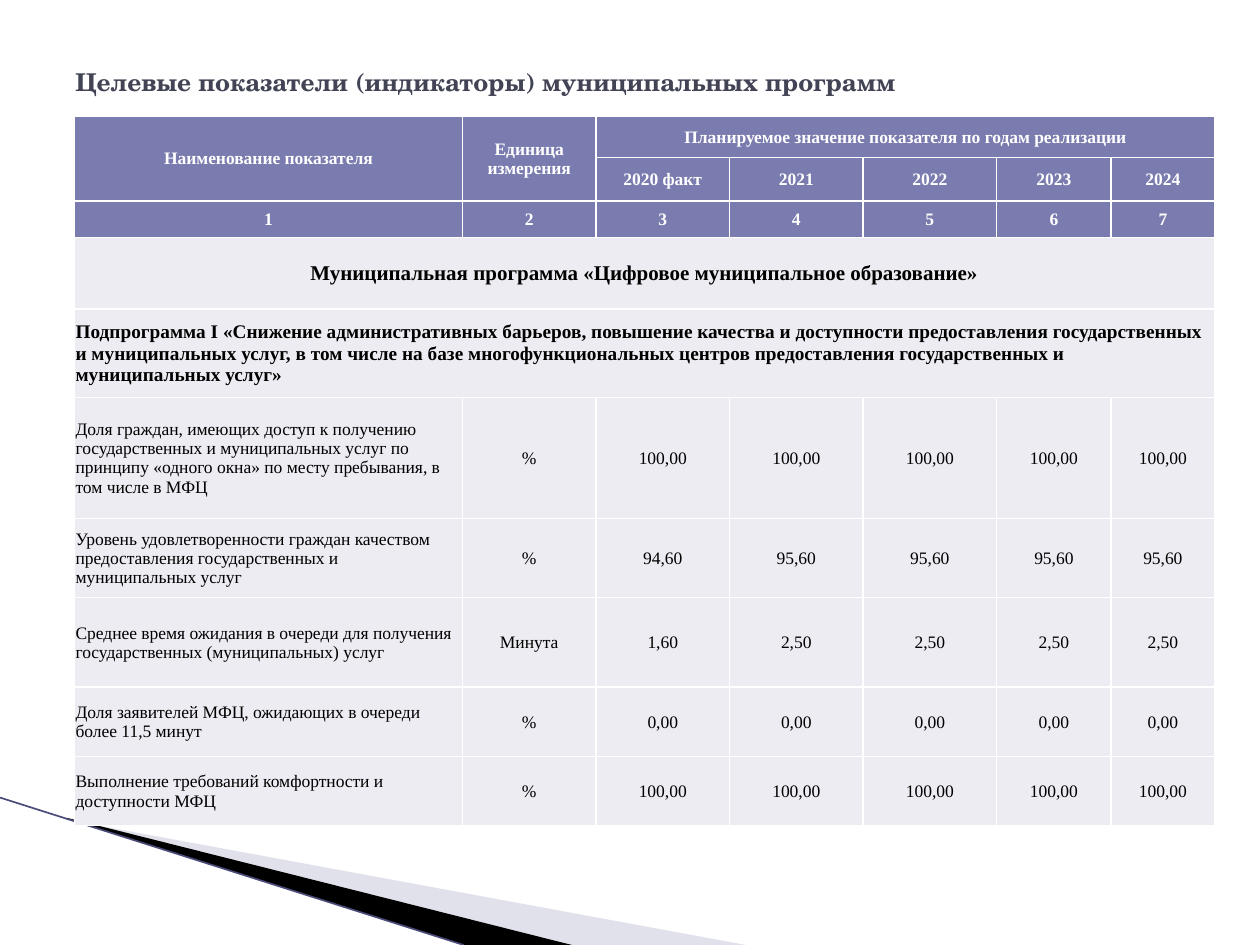
from lxml.etree import SubElement
from pptx import Presentation
from pptx.dml.color import RGBColor
from pptx.enum.shapes import MSO_CONNECTOR
from pptx.enum.text import MSO_ANCHOR, PP_ALIGN
from pptx.oxml.ns import qn
from pptx.util import Inches, Pt

HEADER_FILL = "7A7BAE"
BODY_FILL = "ECECF2"
COLUMN_WIDTHS = [3.08, 1.06, 1.06, 1.06, 1.06, 0.91, 0.82]
ROW_HEIGHTS = [0.33, 0.32, 0.29, 0.57, 0.7, 0.96, 0.63, 0.71, 0.55, 0.55]
YEARS = ["2020 факт", "2021", "2022", "2023", "2024"]
PROGRAM = "Муниципальная программа «Цифровое муниципальное образование»"
SUBPROGRAM = (
    "Подпрограмма I «Снижение административных барьеров, повышение качества "
    "и доступности предоставления государственных и муниципальных услуг, "
    "в том числе на базе многофункциональных центров предоставления "
    "государственных и муниципальных услуг»"
)
INDICATORS = [
    ("Доля граждан, имеющих доступ к получению государственных и муниципальных "
     "услуг по принципу «одного окна» по месту пребывания, в том числе в МФЦ",
     "%", "100,00", "100,00"),
    ("Уровень удовлетворенности граждан качеством предоставления "
     "государственных и муниципальных услуг", "%", "94,60", "95,60"),
    ("Среднее время ожидания в очереди для получения государственных "
     "(муниципальных) услуг", "Минута", "1,60", "2,50"),
    ("Доля заявителей МФЦ, ожидающих в очереди более 11,5 минут",
     "%", "0,00", "0,00"),
    ("Выполнение требований комфортности и доступности МФЦ",
     "%", "100,00", "100,00"),
]


def color(value):
    return RGBColor.from_string(value)


def write_text(text_frame, text, size=10, font="Times New Roman",
               fill="000000", bold=False, align=PP_ALIGN.CENTER):
    paragraph = text_frame.paragraphs[0]
    paragraph.alignment = align
    run = paragraph.add_run()
    run.text = text
    run.font.size = Pt(size)
    run.font.name = font
    run.font.bold = bold
    run.font.color.rgb = color(fill)


def add_title(slide, text):
    box = slide.shapes.add_textbox(Inches(0.5), Inches(0.3), Inches(9), Inches(0.69))
    box.text_frame.word_wrap = True
    box.text_frame.vertical_anchor = MSO_ANCHOR.MIDDLE
    write_text(box.text_frame, text, size=14, font="TeX Gyre Schola",
               fill="424456", bold=True, align=PP_ALIGN.LEFT)


def add_wedge(slide, points, fill, opacity=100):
    corners = [(Inches(x), Inches(y)) for x, y in points]
    builder = slide.shapes.build_freeform(*corners[0])
    builder.add_line_segments(corners[1:], close=True)
    shape = builder.convert_to_shape()
    shape.shadow.inherit = False
    shape.fill.solid()
    shape.fill.fore_color.rgb = color(fill)
    shape.line.fill.background()
    if opacity < 100:
        rgb = shape.fill._xPr.find(qn("a:solidFill"))[0]
        SubElement(rgb, qn("a:alpha"), val=str(opacity * 1000))


def add_line(slide, start, end, fill, width):
    connector = slide.shapes.add_connector(
        MSO_CONNECTOR.STRAIGHT, *(Inches(value) for value in (*start, *end)))
    connector.line.color.rgb = color(fill)
    connector.line.width = Pt(width)
    SubElement(connector._element.spPr, qn("a:effectLst"))


def set_borders(cell, fill, width):
    properties = cell._tc.get_or_add_tcPr()
    for side in ("lnL", "lnR", "lnT", "lnB"):
        line = SubElement(properties, qn(f"a:{side}"), w=str(Pt(width)))
        solid = SubElement(line, qn("a:solidFill"))
        SubElement(solid, qn("a:srgbClr"), val=fill)


def style_cell(cell, fill):
    set_borders(cell, "FFFFFF", 1)
    cell.fill.solid()
    cell.fill.fore_color.rgb = color(fill)
    cell.vertical_anchor = MSO_ANCHOR.MIDDLE
    cell.margin_left = cell.margin_right = cell.margin_top = Inches(0.01)
    cell.margin_bottom = 0


def add_grid(slide):
    table = slide.shapes.add_table(
        len(ROW_HEIGHTS), len(COLUMN_WIDTHS), Inches(0.59), Inches(0.92),
        Inches(sum(COLUMN_WIDTHS)), Inches(sum(ROW_HEIGHTS))).table
    for column, width in zip(table.columns, COLUMN_WIDTHS):
        column.width = Inches(width)
    for index, (row, height) in enumerate(zip(table.rows, ROW_HEIGHTS)):
        row.height = Inches(height)
        for cell in row.cells:
            style_cell(cell, HEADER_FILL if index < 3 else BODY_FILL)
    return table


def merge(table, top, left, bottom, right):
    table.cell(top, left).merge(table.cell(bottom, right))


def write_row(table, row, texts, first_column=0, **text_format):
    for column, text in enumerate(texts, first_column):
        write_text(table.cell(row, column).text_frame, text, **text_format)


def add_indicator_table(slide):
    table = add_grid(slide)
    last = len(COLUMN_WIDTHS) - 1
    merge(table, 0, 0, 1, 0)
    merge(table, 0, 1, 1, 1)
    merge(table, 0, 2, 0, last)
    merge(table, 3, 0, 3, last)
    merge(table, 4, 0, 4, last)

    header = {"fill": "FFFFFF", "bold": True}
    write_row(table, 0, ["Наименование показателя", "Единица измерения",
                         "Планируемое значение показателя по годам реализации"], **header)
    write_row(table, 1, YEARS, first_column=2, **header)
    write_row(table, 2, [str(number) for number in range(1, last + 2)], **header)
    write_row(table, 3, [PROGRAM], size=12, bold=True)
    write_row(table, 4, [SUBPROGRAM], size=11, bold=True, align=PP_ALIGN.LEFT)
    for row, (name, unit, actual, planned) in enumerate(INDICATORS, 5):
        write_row(table, row, [name], align=PP_ALIGN.LEFT)
        write_row(table, row, [unit, actual] + [planned] * 4, first_column=1)


def main():
    presentation = Presentation()
    presentation.slide_width = Inches(10)
    presentation.slide_height = Inches(7.5)
    slide = presentation.slides.add_slide(presentation.slide_layouts[6])
    add_wedge(slide, [(0.55, 6.51), (5.92, 7.5), (4.54, 7.5), (0.55, 6.5)],
              "B6B6D1", opacity=40)
    add_wedge(slide, [(0.53, 6.49), (4.54, 7.5), (3.68, 7.5), (0.54, 6.5)], "000000")
    add_line(slide, (0, 6.33), (3.68, 7.5), "4B4B7A", 0.95)
    add_title(slide, "Целевые показатели (индикаторы) муниципальных программ")
    add_indicator_table(slide)
    presentation.save("out.pptx")


if __name__ == "__main__":
    main()
